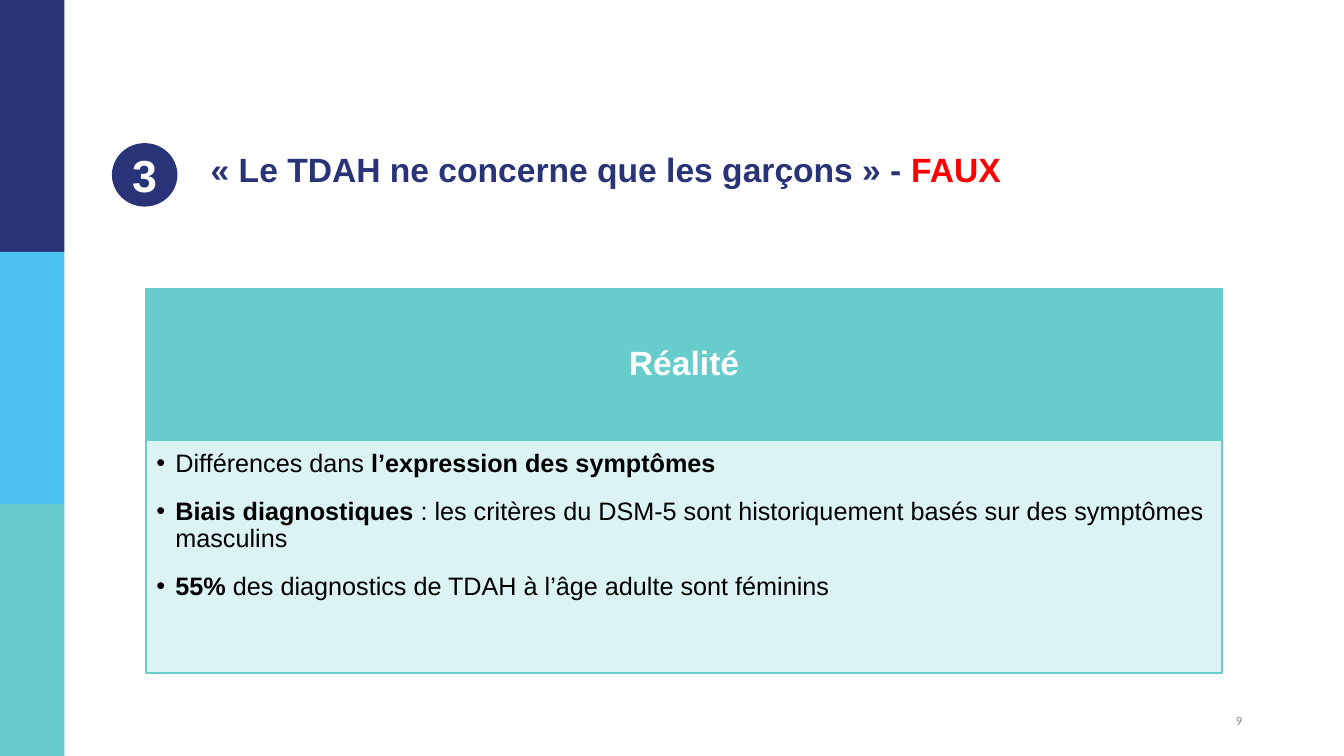
from lxml import etree
from pptx import Presentation
from pptx.dml.color import RGBColor
from pptx.enum.shapes import MSO_SHAPE
from pptx.enum.text import MSO_ANCHOR, MSO_AUTO_SIZE, PP_ALIGN
from pptx.oxml.ns import qn
from pptx.util import Inches, Pt

NAVY = RGBColor(0x29, 0x33, 0x77)
SKY = RGBColor(0x4C, 0xC2, 0xF1)
TEAL = RGBColor(0x67, 0xCC, 0xCC)
PALE = RGBColor(0xD9, 0xF2, 0xF2)
RED = RGBColor(0xFF, 0, 0)
WHITE = RGBColor(0xFF, 0xFF, 0xFF)
BLACK = RGBColor(0, 0, 0)
GREY = RGBColor(0x88, 0x88, 0x88)

RECT, OVAL = MSO_SHAPE.RECTANGLE, MSO_SHAPE.OVAL
TOP, MIDDLE = MSO_ANCHOR.TOP, MSO_ANCHOR.MIDDLE
CENTER, RIGHT, JUSTIFY, LEFT = PP_ALIGN.CENTER, PP_ALIGN.RIGHT, PP_ALIGN.JUSTIFY, PP_ALIGN.LEFT
NO_FIT = MSO_AUTO_SIZE.NONE

SLIDE_W, SLIDE_H = 13.33, 7.5
HEADER_SHARE = 0.395
BULLET_INDENT = 0.19

REALITY = [
    [("Différences dans ", False), ("l’expression des symptômes", True)],
    [("Biais diagnostiques ", True),
     (": les critères du DSM-5 sont historiquement basés sur des symptômes masculins", False)],
    [("55% ", True), ("des diagnostics de TDAH à l’âge adulte sont féminins", False)],
]


def place(s, box):
    """Move a shape to a box given in inches."""
    s.left, s.top, s.width, s.height = (Inches(v) for v in box)


def add_block(slide, kind, box, color, line=None):
    """Add a filled shape, outlined when a line width is given."""
    s = slide.shapes.add_shape(kind, *(Inches(v) for v in box))
    s.shadow.inherit = False
    s.fill.solid()
    s.fill.fore_color.rgb = color
    if line:
        s.line.color.rgb = color
        s.line.width = Pt(line)
    else:
        s.line.fill.background()
    return s


def set_frame(s, anchor, insets):
    """Prepare a text frame and return it."""
    tf = s.text_frame
    tf.word_wrap = True
    tf.auto_size = NO_FIT
    tf.vertical_anchor = anchor
    tf.margin_left, tf.margin_top, tf.margin_right, tf.margin_bottom = (Inches(v) for v in insets)
    return tf


def add_run(p, text, size, color, bold=False, font="Arial"):
    """Add one formatted run to a paragraph."""
    r = p.add_run()
    r.text = text
    r.font.name, r.font.size, r.font.bold = font, Pt(size), bold
    r.font.color.rgb = color


def add_side_band(slide, box):
    """Stack equal colour blocks down the box."""
    x, y, w, h = box
    colors = (NAVY, SKY, TEAL)
    step = h / len(colors)
    for i, color in enumerate(colors):
        add_block(slide, RECT, (x, y + i * step, w, step), color)


def add_claim(slide, box, number):
    """Set the numbered badge and the claim title in the box."""
    x, y, w, h = box
    badge = add_block(slide, OVAL, (x, y, 0.65, h), NAVY)
    p = set_frame(badge, MIDDLE, (0, 0, 0, 0)).paragraphs[0]
    p.alignment = CENTER
    add_run(p, number, 32, WHITE, True)

    title = slide.shapes.title
    place(title, (x + 0.88, y, w - 0.88, h))
    p = set_frame(title, TOP, (0.1, 0.1, 0.1, 0.1)).paragraphs[0]
    p.alignment, p.line_spacing = JUSTIFY, 0.9
    add_run(p, "« Le TDAH ne concerne que les garçons » - ", 24, NAVY, True)
    add_run(p, "FAUX", 24, RED, True)


def add_reality(slide, box):
    """Set the header bar and the bullet panel in the box."""
    x, y, w, h = box
    header_h = h * HEADER_SHARE
    header = add_block(slide, RECT, (x, y, w, header_h), TEAL, 1)
    p = set_frame(header, MIDDLE, (0.19, 0.11, 0.19, 0.11)).paragraphs[0]
    p.alignment, p.line_spacing = CENTER, 0.9
    add_run(p, "Réalité", 24, WHITE, True)

    body = slide.placeholders[1]
    place(body, (x, y + header_h, w, h - header_h))
    body.fill.solid()
    body.fill.fore_color.rgb = PALE
    color = body.fill._xPr.find(qn("a:solidFill"))[0]
    etree.SubElement(color, qn("a:alpha")).set("val", "90000")
    body.line.color.rgb = TEAL
    body.line.width = Pt(1.5)
    tf = set_frame(body, TOP, (0.1, 0.1, 0.14, 0.16))
    for i, runs in enumerate(REALITY):
        p = tf.add_paragraph() if i else tf.paragraphs[0]
        pPr = p._p.get_or_add_pPr()
        pPr.set("marL", str(Inches(BULLET_INDENT)))
        pPr.set("indent", str(-Inches(BULLET_INDENT)))
        etree.SubElement(pPr, qn("a:buChar")).set("char", "•")
        p.alignment, p.line_spacing = LEFT, 0.9
        p.space_before, p.space_after = Pt(0), Pt(15)
        for text, bold in runs:
            add_run(p, text, 18, BLACK, bold)


def add_page_number(slide, box, number):
    """Set the page number at the right of the box."""
    s = slide.shapes.add_textbox(*(Inches(v) for v in box))
    p = set_frame(s, MIDDLE, (0.1, 0.05, 0.1, 0.05)).paragraphs[0]
    p.alignment = RIGHT
    add_run(p, number, 9, GREY, font="Calibri")


def main():
    """Build and save the slide."""
    prs = Presentation()
    prs.slide_width, prs.slide_height = Inches(SLIDE_W), Inches(SLIDE_H)
    slide = prs.slides.add_slide(prs.slide_layouts[1])
    add_side_band(slide, (0, 0, 0.64, SLIDE_H))
    add_claim(slide, (1.11, 1.42, 10.69, 0.63), "3")
    add_reality(slide, (1.45, 2.86, 10.67, 3.82))
    add_page_number(slide, (9.42, 6.95, 3, 0.4), "9")
    prs.save("out.pptx")


if __name__ == "__main__":
    main()
